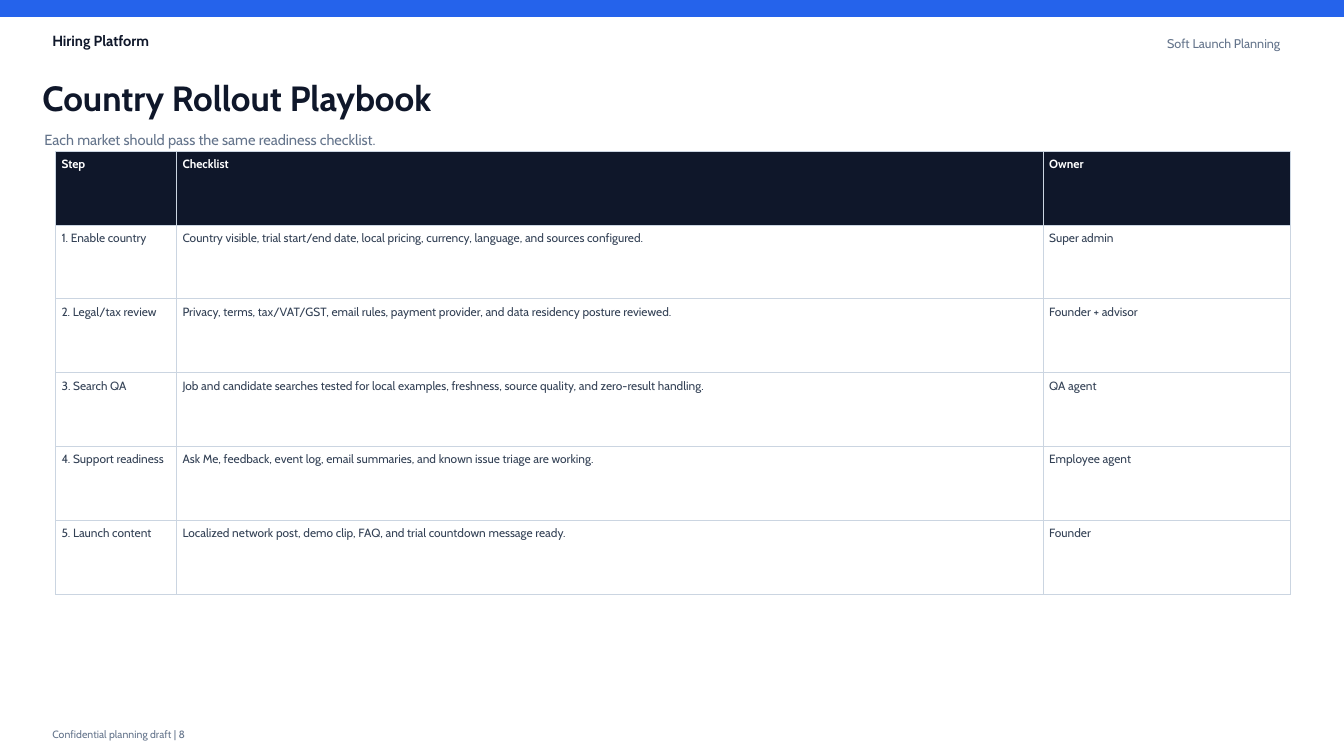
from lxml import etree
from pptx import Presentation
from pptx.dml.color import RGBColor
from pptx.enum.shapes import MSO_SHAPE
from pptx.enum.text import MSO_ANCHOR, PP_ALIGN
from pptx.oxml.ns import qn
from pptx.util import Cm, Pt

RECTANGLE = MSO_SHAPE.RECTANGLE
MIDDLE, TOP = MSO_ANCHOR.MIDDLE, MSO_ANCHOR.TOP
LEFT, RIGHT = PP_ALIGN.LEFT, PP_ALIGN.RIGHT

COLOURS = {
    "accent": "2563EB",
    "ink": "0F172A",
    "muted": "64748B",
    "body": "334155",
    "border": "CBD5E1",
    "white": "FFFFFF",
}
CHECKLIST = [
    ("Step", "Checklist", "Owner"),
    ("1. Enable country",
     "Country visible, trial start/end date, local pricing, currency, language, and sources configured.",
     "Super admin"),
    ("2. Legal/tax review",
     "Privacy, terms, tax/VAT/GST, email rules, payment provider, and data residency posture reviewed.",
     "Founder + advisor"),
    ("3. Search QA",
     "Job and candidate searches tested for local examples, freshness, source quality, and zero-result handling.",
     "QA agent"),
    ("4. Support readiness",
     "Ask Me, feedback, event log, email summaries, and known issue triage are working.",
     "Employee agent"),
    ("5. Launch content",
     "Localized network post, demo clip, FAQ, and trial countdown message ready.",
     "Founder"),
]


def colour(name):
    return RGBColor.from_string(COLOURS[name])


def write_text(frame, text, *, font, size, ink, bold=False, align=LEFT):
    para = frame.paragraphs[0]
    para.alignment = align
    span = para.add_run()
    span.text = text
    span.font.name = font
    span.font.size = Pt(size)
    span.font.bold = bold
    span.font.color.rgb = colour(ink)


class SlideBuilder:
    def __init__(self, page, font):
        self.page = page
        self.font = font

    def bar(self, left, top, width, height, fill):
        shape = self.page.shapes.add_shape(
            RECTANGLE, Cm(left), Cm(top), Cm(width), Cm(height))
        shape.shadow.inherit = False
        shape.fill.solid()
        shape.fill.fore_color.rgb = colour(fill)
        shape.line.color.rgb = colour(fill)
        shape.line.width = Pt(1)

    def text(self, text, left, top, width, height, *, inset=True, **style):
        box = self.page.shapes.add_textbox(
            Cm(left), Cm(top), Cm(width), Cm(height))
        frame = box.text_frame
        frame.word_wrap = True
        frame.vertical_anchor = MIDDLE
        if not inset:
            frame.margin_left = frame.margin_right = 0
            frame.margin_top = frame.margin_bottom = 0
        write_text(frame, text, font=self.font, **style)

    def borders(self, cell, ink, width):
        properties = cell._tc.get_or_add_tcPr()
        for side in ("a:lnL", "a:lnR", "a:lnT", "a:lnB"):
            line = etree.SubElement(properties, qn(side), w=str(Pt(width)))
            fill = etree.SubElement(line, qn("a:solidFill"))
            etree.SubElement(fill, qn("a:srgbClr"), val=COLOURS[ink])

    def table(self, rows, left, top, widths, row_height):
        table = self.page.shapes.add_table(
            len(rows), len(widths), Cm(left), Cm(top),
            Cm(sum(widths)), Cm(row_height * len(rows))).table
        table.horz_banding = False
        for column, width in zip(table.columns, widths):
            column.width = Cm(width)
        for row_index, values in enumerate(rows):
            table.rows[row_index].height = Cm(row_height)
            header = row_index == 0
            for column_index, value in enumerate(values):
                cell = table.cell(row_index, column_index)
                cell.vertical_anchor = TOP
                cell.margin_left = cell.margin_right = Cm(0.15)
                cell.margin_top = cell.margin_bottom = Cm(0.15)
                self.borders(cell, "border", 0.7)
                cell.fill.solid()
                cell.fill.fore_color.rgb = colour("ink" if header else "white")
                write_text(cell.text_frame, value, font=self.font, size=8.5,
                           ink="white" if header else "body", bold=header)


def main():
    deck = Presentation()
    deck.slide_width, deck.slide_height = Cm(33.87), Cm(19.05)
    page = deck.slides.add_slide(deck.slide_layouts[6])
    page.background.fill.solid()
    page.background.fill.fore_color.rgb = colour("white")
    builder = SlideBuilder(page, "Cabin")

    builder.bar(0, 0, 33.87, 0.41, "accent")
    builder.text("Hiring Platform", 1.07, 0.71, 5.84, 0.64,
                 size=10.5, ink="ink", bold=True)
    builder.text("Country Rollout Playbook", 1.07, 1.83, 22.1, 1.27,
                 inset=False, size=25, ink="ink", bold=True)
    builder.text("Each market should pass the same readiness checklist.",
                 1.12, 3.1, 24.13, 0.86, inset=False, size=10.5, ink="muted")
    builder.text("Soft Launch Planning", 26.29, 0.76, 6.22, 0.66,
                 size=9, ink="muted", align=RIGHT)
    builder.table(CHECKLIST, 1.4, 3.81, (3.05, 21.84, 6.22), 1.86)
    builder.text("Confidential planning draft | 8", 1.07, 18.24, 11.68, 0.51,
                 size=7.5, ink="muted")
    deck.save("out.pptx")


if __name__ == "__main__":
    main()
